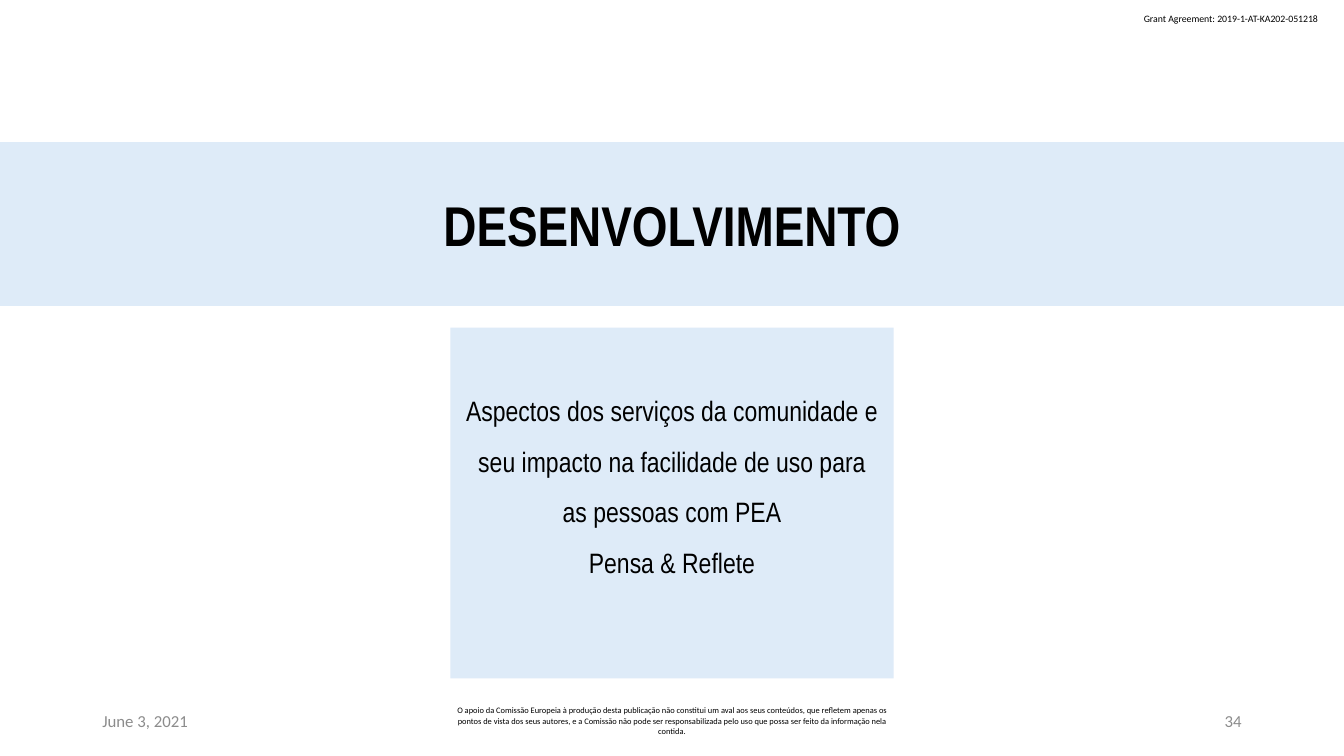
from pptx import Presentation
from pptx import util as u
from pptx.dml import color
from pptx.enum import shapes, text

Pt = u.Pt
HUES = {"panel": "DEEBF8", "ink": "000000", "muted": "8C8C8C"}
ALIGN = text.PP_ALIGN


def paint(name):
    """Return the named colour."""
    return color.RGBColor.from_string(HUES[name])


def write(frame, lines, size, face="Calibri", hue="ink", align=ALIGN.LEFT, bold=False, space=None):
    """Fill a text frame with evenly styled paragraphs."""
    frame.text = "\n".join(lines)
    for para in frame.paragraphs:
        para.alignment = align
        para.line_spacing = space
        font = para.font
        font.name, font.size, font.bold = face, Pt(size), bold
        font.color.rgb = paint(hue)


def label(slide, box, line, size, wrap=True, anchor=text.MSO_ANCHOR.MIDDLE, **style):
    """Add a plain line of text in a box."""
    frame = slide.shapes.add_textbox(*map(Pt, box)).text_frame
    frame.word_wrap = wrap
    frame.vertical_anchor = anchor
    write(frame, [line], size, **style)


def panel(slide, box, lines, size, foot=5, **style):
    """Add a tinted panel with centred text above the foot margin."""
    shape = slide.shapes.add_shape(shapes.MSO_SHAPE.RECTANGLE, *map(Pt, box))
    shape.shadow.inherit = False
    shape.fill.solid()
    shape.fill.fore_color.rgb = paint("panel")
    shape.line.fill.background()
    frame = shape.text_frame
    frame.word_wrap = True
    frame.vertical_anchor = text.MSO_ANCHOR.MIDDLE
    frame.margin_left = frame.margin_right = Pt(9.4)
    frame.margin_top, frame.margin_bottom = Pt(5), Pt(foot)
    write(frame, lines, size, face="Arial Narrow", align=ALIGN.CENTER, **style)


def footer(slide, left, top, width, height):
    """Add the date, disclaimer and page number along the bottom."""
    side, mid = 216, 324
    label(slide, (left, top, side, height), "June 3, 2021", 12, hue="muted")
    label(slide, (left + (width - mid) / 2, top, mid, height),
          "O apoio da Comissão Europeia à produção desta publicação não constitui um aval "
          "aos seus conteúdos, que refletem apenas os pontos de vista dos seus autores, e a "
          "Comissão não pode ser responsabilizada pelo uso que possa ser feito da informação "
          "nela contida.", 6, align=ALIGN.CENTER)
    label(slide, (left + width - side, top, side, height), "34", 12,
          hue="muted", align=ALIGN.RIGHT)


def main():
    """Build and save the section slide."""
    deck = Presentation()
    deck.slide_width, deck.slide_height = Pt(960), Pt(540)
    slide = deck.slides.add_slide(deck.slide_layouts[6])
    label(slide, (810, 5.8, 141.8, 15.8), "Grant Agreement: 2019-1-AT-KA202-051218", 7,
          wrap=False, anchor=text.MSO_ANCHOR.TOP)
    footer(slide, 66, 500.4, 828, 28.8)
    panel(slide, (0, 101.5, 960, 117), ["DESENVOLVIMENTO"], 40, bold=True)
    panel(slide, (321.7, 234, 316.6, 250.6),
          ["Aspectos dos serviços da comunidade e seu impacto na facilidade de uso para "
           "as pessoas com PEA", "Pensa & Reflete"], 20, foot=41, space=1.5)
    deck.save("out.pptx")


if __name__ == "__main__":
    main()
